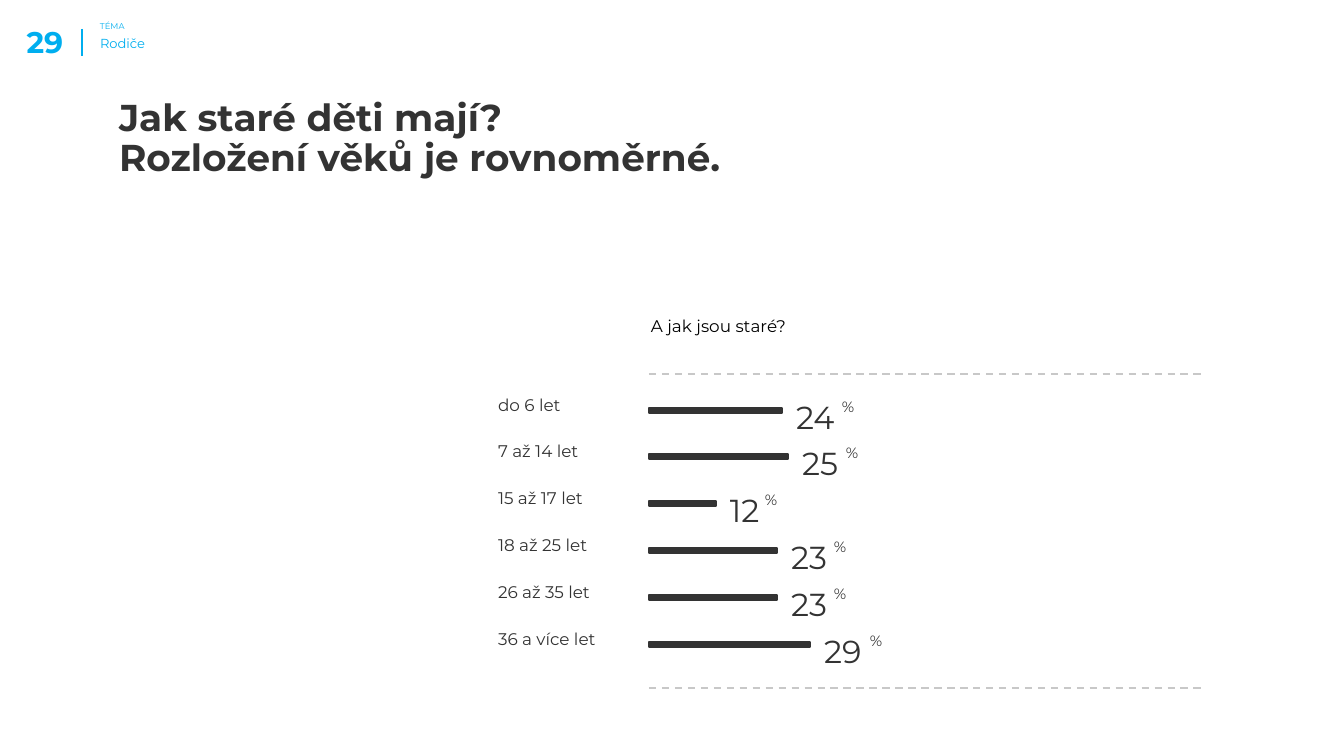
"""Build the slide on the ages of the parents' children."""
from pptx import Presentation
from pptx.dml.color import RGBColor
from pptx.enum.dml import MSO_LINE
from pptx.enum.shapes import MSO_CONNECTOR, MSO_SHAPE
from pptx.enum.text import MSO_ANCHOR, PP_ALIGN
from pptx.oxml.ns import qn
from pptx.util import Pt
from lxml.etree import SubElement

PX = 914400 / 134.4
COLORS = {"accent": "00AEEF", "dark": "333333", "rule": "C8C8C8", "black": "000000"}

prs = Presentation()
prs.slide_width, prs.slide_height = round(1344 * PX), round(756 * PX)
slide = prs.slides.add_slide(prs.slide_layouts[6])
shapes = slide.shapes


def add_text(lines, left, top, width, height, size, color, bold=False, inset=13):
    box = shapes.add_textbox(*(round(v * PX) for v in (left, top, width, height)))
    frame = box.text_frame
    frame.word_wrap = True
    frame.margin_left = frame.margin_top = round(13 * PX)
    frame.margin_right = frame.margin_bottom = round(inset * PX)
    paragraph = frame.paragraphs[0]
    for number, line in enumerate(lines):
        if number:
            paragraph.add_line_break()
        run = paragraph.add_run()
        run.text = line
        run.font.name = "Montserrat"
        run.font.size = Pt(size)
        run.font.bold = bold
        run.font.color.rgb = RGBColor.from_string(COLORS[color])
    return frame


def add_rule(x1, y1, x2, y2, width, color):
    rule = shapes.add_connector(
        MSO_CONNECTOR.STRAIGHT, *(round(v * PX) for v in (x1, y1, x2, y2)))
    rule.line.width = Pt(width)
    rule.line.color.rgb = RGBColor.from_string(COLORS[color])
    SubElement(rule._element.spPr, qn("a:effectLst"))
    return rule


add_rule(82, 29, 82, 56, 0.75, "accent")
page_number = add_text(["29"], 0, 0, 63, 60, 16, "accent", bold=True, inset=0)
page_number.vertical_anchor = MSO_ANCHOR.BOTTOM
page_number.paragraphs[0].alignment = PP_ALIGN.RIGHT
add_text(["TÉMA"], 87, 16, 85, 56, 4.5, "accent")
add_text(["Rodiče"], 87, 28, 101, 39, 7, "accent")

title = add_text(["Jak staré děti mají?", "Rozložení věků je rovnoměrné."],
                 106, 86, 884, 67, 20, "dark", bold=True)
title.paragraphs[0].line_spacing = 0.9

add_text(["A jak jsou staré?"], 638, 306, 585, 47, 9, "black")
for rule_y in (374, 688):
    add_rule(649, rule_y, 1206, rule_y, 1, "rule").line.dash_style = MSO_LINE.DASH

AGE_GROUPS = [
    ("do 6 let", 24, 46),
    ("7 až 14 let", 25, 44),
    ("15 až 17 let", 12, 35),
    ("18 až 25 let", 23, 43),
    ("26 až 35 let", 23, 43),
    ("36 a více let", 29, 46),
]
BAR_LEFT, FIRST_BAR_TOP, BAR_HEIGHT = 649, 408, 5
PX_PER_PERCENT = 5.55

for row, (age, share, unit_offset) in enumerate(AGE_GROUPS):
    bar_top = FIRST_BAR_TOP + row * 234 // 5
    bar_width = round(share * PX_PER_PERCENT)
    value_left = BAR_LEFT + bar_width + 1
    add_text([age], 485, bar_top - 23, 157, 42, 9, "dark")
    bar = shapes.add_shape(MSO_SHAPE.RECTANGLE, *(
        round(v * PX) for v in (BAR_LEFT, bar_top, bar_width, BAR_HEIGHT)))
    bar.shadow.inherit = False
    bar.fill.solid()
    bar.fill.fore_color.rgb = RGBColor.from_string(COLORS["dark"])
    bar.line.color.rgb = RGBColor.from_string(COLORS["dark"])
    bar.line.width = Pt(1)
    add_text([str(share)], value_left, bar_top - 23, 90, 51, 17, "dark")
    add_text(["%"], value_left + unit_offset, bar_top - 19, 62, 39, 8, "dark")

prs.save("out.pptx")
